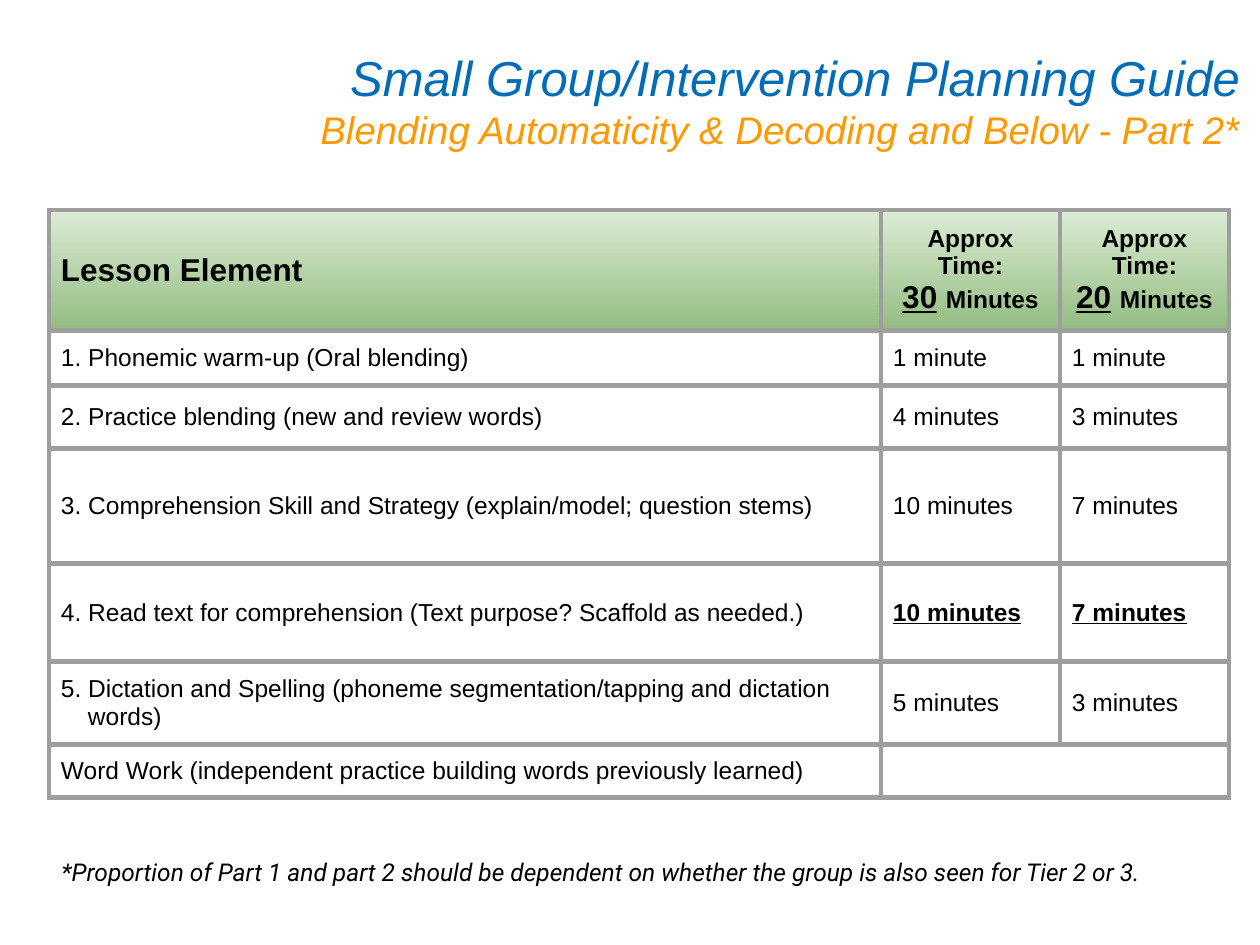
from pptx import Presentation
from pptx.dml.color import RGBColor as Rgb
from pptx.enum.text import MSO_ANCHOR as Anchor, PP_ALIGN as Align
from pptx.oxml import parse_xml
from pptx.oxml.ns import nsdecls
from pptx.util import Pt

PX = 914400 / 126


class Theme:
    blue, gold, black = "026CB6", "FF9900", "000000"
    light, green, rule = "DCECD5", "93BC81", "9E9E9E"
    face, note = "Arial", "Roboto"
    title, sub, head, body = 28, 22, 18, 14
    line = 3
    pad = 12


BASE = {"name": Theme.face, "size": Theme.body, "color": Theme.black}
HEAD = {"bold": True}
BIG = {"bold": True, "size": Theme.head}
KEY = {"bold": True, "underline": True}

# A cell is a list of paragraphs, and a paragraph a list of (text, format) runs.
def plain(text, **fmt):
    return [[(text, fmt)]]


def timing(count):
    return [[("Approx Time:", HEAD)],
            [(count, {**BIG, "underline": True}), (" ", BIG), ("Minutes", HEAD)]]


COLS = [832, 179, 169]
ROWS = [
    (115, [plain("Lesson Element", **BIG), timing("30"), timing("20")]),
    (55, [plain("1. Phonemic warm-up (Oral blending)"),
          plain("1 minute"), plain("1 minute")]),
    (63, [plain("2. Practice blending (new and review words)"),
          plain("4 minutes"), plain("3 minutes")]),
    (115, [plain("3. Comprehension Skill and Strategy (explain/model; question stems)"),
           plain("10 minutes"), plain("7 minutes")]),
    (98, [plain("4. Read text for comprehension (Text purpose? Scaffold as needed.)"),
          plain("10 minutes", **KEY), plain("7 minutes", **KEY)]),
    (80, [plain("5. Dictation and Spelling (phoneme segmentation/tapping and dictation")
          + plain("words)"), plain("5 minutes"), plain("3 minutes")]),
    (53, [plain("Word Work (independent practice building words previously learned)"),
          [], []]),
]


def px(num):
    return round(num * PX)


def add_run(para, text, fmt):
    run = para.add_run()
    run.text = text
    for key, val in {**BASE, **fmt}.items():
        if key == "color":
            run.font.color.rgb = Rgb.from_string(val)
        else:
            setattr(run.font, key, Pt(val) if key == "size" else val)


def add_text(slide, box, anchor):
    frame = slide.shapes.add_textbox(*map(px, box)).text_frame
    frame.word_wrap = True
    frame.vertical_anchor = anchor
    return frame.paragraphs[0]


def add_title(slide, box):
    para = add_text(slide, box, Anchor.MIDDLE)
    para.alignment = Align.RIGHT
    add_run(para, "Small Group/Intervention Planning Guide",
            {"size": Theme.title, "color": Theme.blue, "italic": True})
    para.add_line_break()
    add_run(para, "Blending Automaticity & Decoding and Below - Part 2*",
            {"size": Theme.sub, "color": Theme.gold, "italic": True})


def add_note(slide, box):
    para = add_text(slide, box, Anchor.TOP)
    add_run(para, "*Proportion of Part 1 and part 2 should be dependent on whether "
            "the group is also seen for Tier 2 or 3.",
            {"name": Theme.note, "italic": True})


def style_cell(cell, head):
    for side in ("left", "right", "top", "bottom"):
        setattr(cell, f"margin_{side}", px(Theme.pad))
    cell.vertical_anchor = Anchor.MIDDLE
    props = cell._tc.get_or_add_tcPr()
    for side in "LRTB":
        props.append(parse_xml(
            f'<a:ln{side} {nsdecls("a")} w="{Pt(Theme.line)}"><a:solidFill>'
            f'<a:srgbClr val="{Theme.rule}"/></a:solidFill></a:ln{side}>'))
    if not head:
        cell.fill.background()
        return
    cell.fill.gradient()
    cell.fill.gradient_angle = 270
    for stop, tint in zip(cell.fill.gradient_stops, (Theme.light, Theme.green)):
        stop.color.rgb = Rgb.from_string(tint)


def fill_cell(cell, paras, align):
    frame = cell.text_frame
    for i, runs in enumerate(paras):
        para = frame.add_paragraph() if i else frame.paragraphs[0]
        para.alignment = align
        if i and align == Align.LEFT:
            para._p.get_or_add_pPr().set("marL", str(px(27)))
        for text, fmt in runs:
            add_run(para, text, fmt)
    if not paras:
        end = frame.paragraphs[0]._p.get_or_add_endParaRPr()
        end.set("sz", str(Theme.body * 100))


def add_plan(slide, left, top):
    size = sum(COLS), sum(high for high, _ in ROWS)
    table = slide.shapes.add_table(len(ROWS), len(COLS),
                                   *map(px, (left, top, *size))).table
    table.first_row = table.horz_banding = False
    for col, wide in zip(table.columns, COLS):
        col.width = px(wide)
    for r, (high, cells) in enumerate(ROWS):
        table.rows[r].height = px(high)
        for c, paras in enumerate(cells):
            cell = table.cell(r, c)
            style_cell(cell, r == 0)
            fill_cell(cell, paras, Align.CENTER if r == 0 and c else Align.LEFT)
    last = len(ROWS) - 1
    table.cell(last, 1).merge(table.cell(last, 2))


def main():
    deck = Presentation()
    deck.slide_width, deck.slide_height = px(1260), px(945)
    slide = deck.slides.add_slide(deck.slide_layouts[6])
    add_title(slide, (295, 32, 957, 136))
    add_note(slide, (49, 851, 1154, 94))
    add_plan(slide, 49, 210)
    deck.save("out.pptx")


if __name__ == "__main__":
    main()
